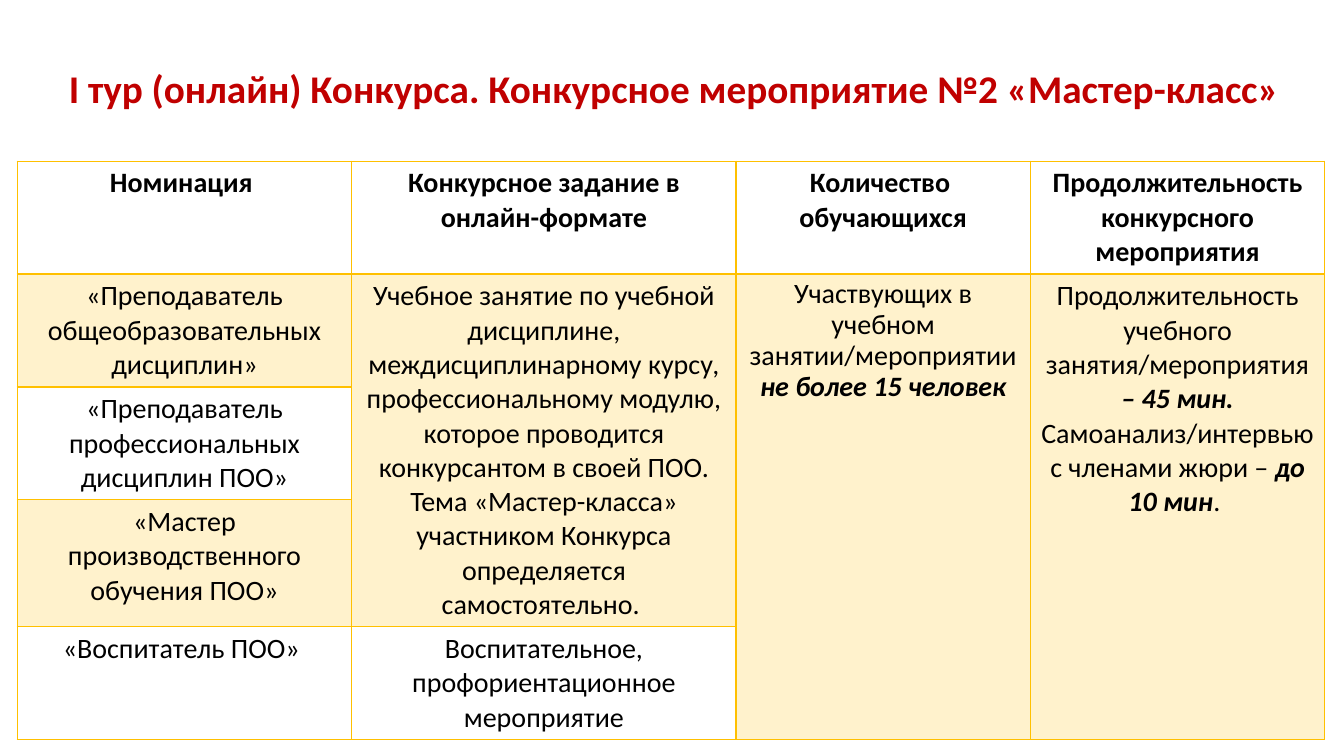
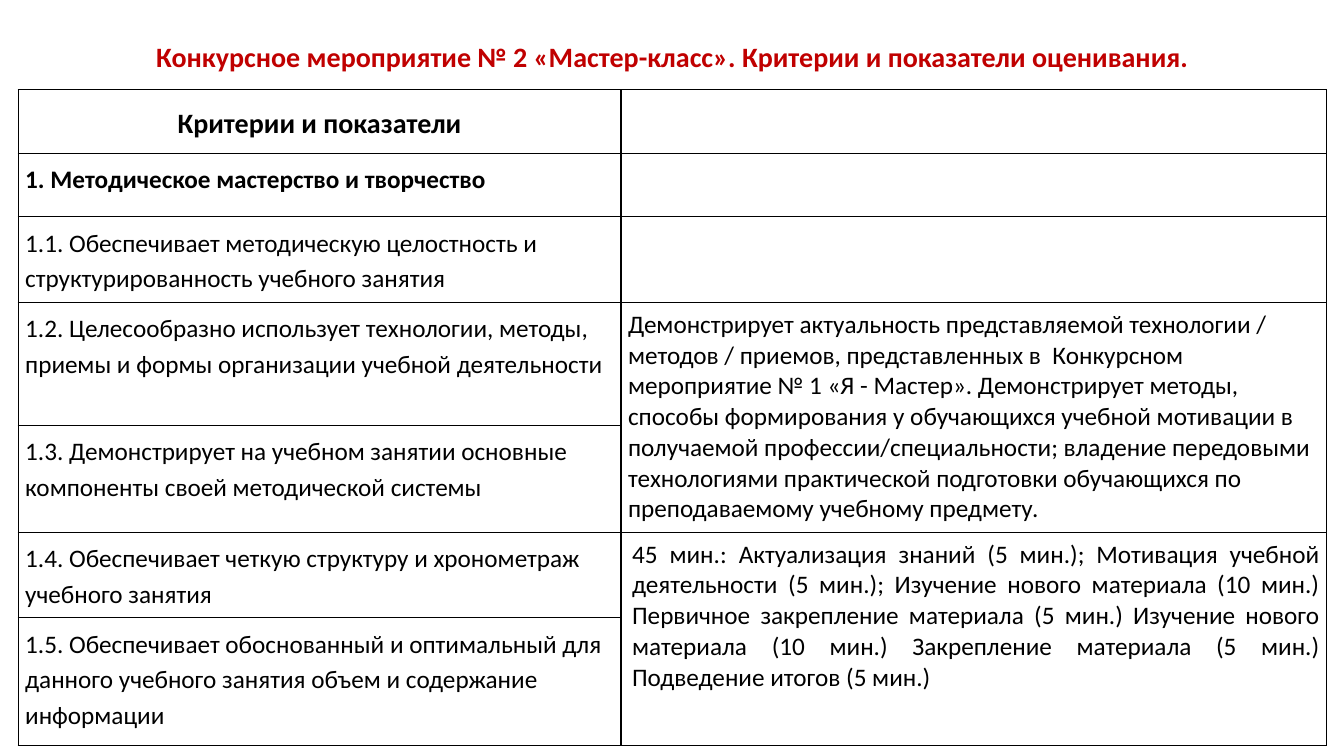
from lxml import etree
from pptx import Presentation
from pptx import util as u
from pptx.dml.color import RGBColor
from pptx.enum import text
from pptx.oxml.ns import qn

# Shared look
W, H = 13.33, 7.5
FONT = "Calibri"
RED, BLACK, GOLD, CREAM = "C00000", "000000", "FFC000", "FFF2CC"
MID, LEFT, JUST = text.PP_ALIGN.CENTER, text.PP_ALIGN.LEFT, text.PP_ALIGN.JUSTIFY
hue = RGBColor.from_string


def write(frame, words, size=20, color=BLACK, bold=False, align=MID,
          line=1.0, before=0, after=0, indent=0):
    """Fill a text frame; a line break parts paragraphs, *stars* mark bold italic."""
    frame.word_wrap = True
    for n, part in enumerate(words.split("\n")):
        par = frame.add_paragraph() if n else frame.paragraphs[0]
        par.alignment, par.line_spacing = align, line
        par.space_before, par.space_after = u.Pt(before), u.Pt(after)
        if indent:
            par._p.get_or_add_pPr().set("marL", str(u.Inches(indent)))
        for k, bit in enumerate(part.split("*")):
            if bit:
                run = par.add_run()
                run.text = bit
                font = run.font
                font.name, font.size = FONT, u.Pt(size)
                font.bold, font.italic = bold or k % 2 == 1, k % 2 == 1
                font.color.rgb = hue(color)


def box(x, y, wide, high):
    """Turn percentages of the slide into lengths."""
    return [u.Inches(side * share / 100)
            for side, share in zip((W, H, W, H), (x, y, wide, high))]


# Cell formats
head = dict(bold=True)
item = dict(size=18, align=LEFT, line=1.15, after=10)
note = dict(size=18, align=LEFT)
empty = ("", note)

# Pages: None in a grid carries on the cell above
pages = [
    dict(
        title="I тур (онлайн) Конкурса. Конкурсное мероприятие №2 «Мастер-класс»",
        size=28, place=(2.63, 5.33, 94.97, 13.33), line=0.9,
        table=(1.28, 21.33, 97.3, 76.53), edge=GOLD, band=CREAM, rule=2,
        inset=(0.1, 0.05), cols=[3.32, 3.81, 2.92, 2.92],
        rows=[1.12, 1.12, 1.12, 1.26, 1.12],
        grid=[
            [("Номинация ", head),
             ("Конкурсное задание в онлайн-формате", head),
             ("Количество \nобучающихся", head),
             ("Продолжительность конкурсного мероприятия", head)],
            [("«Преподаватель общеобразовательных дисциплин»", {}),
             ("Учебное занятие по учебной дисциплине, междисциплинарному курсу, "
              "профессиональному модулю, которое проводится конкурсантом в своей ПОО.\n"
              "Тема «Мастер-класса» участником Конкурса определяется самостоятельно. ", {}),
             ("Участвующих в учебном занятии/мероприятии *не более 15 человек*",
              dict(line=0.9, before=10)),
             ("Продолжительность учебного занятия/мероприятия *– 45 мин. *"
              "Самоанализ/интервью с членами жюри – *до 10 мин*. ", {})],
            [("«Преподаватель профессиональных дисциплин ПОО»", {}), None, None, None],
            [("«Мастер производственного обучения ПОО»", {}), None, None, None],
            [("«Воспитатель ПОО» ", {}),
             ("Воспитательное, профориентационное мероприятие", {}), None, None],
        ]),
    dict(
        title="Конкурсное мероприятие № 2 «Мастер-класс». Критерии и показатели оценивания.",
        size=20, place=(1.35, 3.07, 97.37, 8.8), line=1.0,
        table=(1.35, 11.87, 97.37, 86.8), edge=BLACK, band=None, rule=1,
        inset=(0.07, 0.07), cols=[5.98, 7],
        rows=[0.63, 0.63, 0.85, 1.22, 1.06, 0.85, 1.27],
        grid=[
            [("Критерии и показатели", dict(bold=True, line=1.15, after=10)), empty],
            [("1. Методическое мастерство и творчество", dict(item, bold=True)), empty],
            [("1.1. Обеспечивает методическую целостность и структурированность "
              "учебного занятия", item), empty],
            [("1.2. Целесообразно использует технологии, методы, приемы и формы "
              "организации учебной деятельности", item),
             ("Демонстрирует актуальность представляемой технологии / методов / приемов, "
              "представленных в  Конкурсном мероприятие № 1 «Я - Мастер». Демонстрирует "
              "методы, способы формирования у обучающихся учебной мотивации в получаемой "
              "профессии/специальности; владение передовыми технологиями практической "
              "подготовки обучающихся по преподаваемому учебному предмету.", note)],
            [("1.3. Демонстрирует на учебном занятии основные компоненты своей "
              "методической системы", item), None],
            [("1.4. Обеспечивает четкую структуру и хронометраж учебного занятия", item),
             ("45 мин.: Актуализация знаний (5 мин.); Мотивация учебной деятельности "
              "(5 мин.); Изучение нового материала (10 мин.) Первичное закрепление "
              "материала (5 мин.) Изучение нового материала (10 мин.) Закрепление "
              "материала (5 мин.) Подведение итогов (5 мин.)",
              dict(size=18, align=JUST, indent=0.04))],
            [("1.5. Обеспечивает обоснованный и оптимальный для данного учебного занятия "
              "объем и содержание информации", item), None],
        ]),
]

deck = Presentation()
deck.slide_width, deck.slide_height = u.Inches(W), u.Inches(H)

for page in pages:
    slide = deck.slides.add_slide(deck.slide_layouts[6])

    # Title
    frame = slide.shapes.add_textbox(*box(*page["place"])).text_frame
    frame.vertical_anchor = text.MSO_ANCHOR.MIDDLE
    write(frame, page["title"], size=page["size"], color=RED, bold=True, line=page["line"])

    # Table and its grid
    grid, cols, rows = page["grid"], page["cols"], page["rows"]
    area = box(*page["table"])
    table = slide.shapes.add_table(len(rows), len(cols), *area).table
    table.first_row = table.horz_banding = False
    for col, part in zip(table.columns, cols):
        col.width = int(area[2] * part / sum(cols))
    for row, part in zip(table.rows, rows):
        row.height = int(area[3] * part / sum(rows))

    for r, line in enumerate(grid):
        for c, entry in enumerate(line):
            cell = table.cell(r, c)

            # Fill, insets and text
            if page["band"] and r % 2:
                cell.fill.solid()
                cell.fill.fore_color.rgb = hue(page["band"])
            else:
                cell.fill.background()
            side, top = page["inset"]
            cell.margin_left = cell.margin_right = u.Inches(side)
            cell.margin_top = cell.margin_bottom = u.Inches(top)
            if entry:
                write(cell.text_frame, entry[0], **entry[1])

            # Borders, with a heavier rule under the header
            props = cell._tc.get_or_add_tcPr()
            for n, name in enumerate(("lnL", "lnR", "lnT", "lnB")):
                heavy = (r, name) in ((0, "lnB"), (1, "lnT"))
                edge = etree.Element(qn("a:" + name),
                                     w=str(u.Pt(page["rule"] if heavy else 1)))
                paint = etree.SubElement(edge, qn("a:solidFill"))
                etree.SubElement(paint, qn("a:srgbClr"), val=page["edge"])
                props.insert(n, edge)

    # Join each cell with the gaps below it
    for c in range(len(cols)):
        for r in range(len(rows)):
            last = r
            while last + 1 < len(rows) and grid[last + 1][c] is None:
                last += 1
            if grid[r][c] and last > r:
                table.cell(r, c).merge(table.cell(last, c))
    if page["rule"] == 1:
        table.cell(0, 0).vertical_anchor = text.MSO_ANCHOR.MIDDLE

deck.save("out.pptx")
